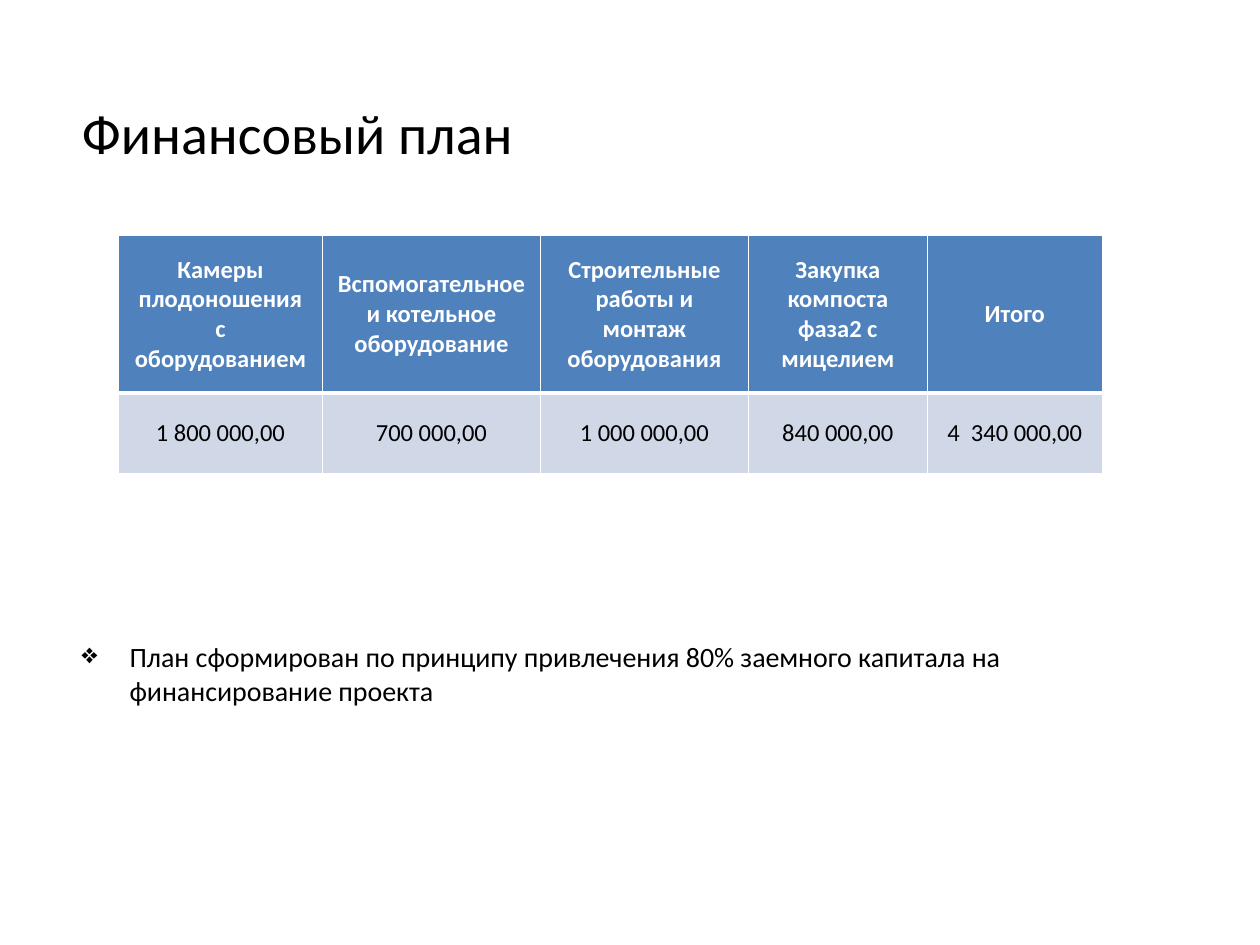
import pptx
import pptx.util
from lxml import etree
from pptx.dml.color import RGBColor
from pptx.enum.text import MSO_ANCHOR, PP_ALIGN
from pptx.oxml.ns import qn
from pptx.util import Inches, Pt

BLACK = RGBColor(0x00, 0x00, 0x00)
WHITE = RGBColor(0xFF, 0xFF, 0xFF)
HEADER_BLUE = RGBColor(0x4F, 0x81, 0xBD)
ROW_BLUE = RGBColor(0xD0, 0xD8, 0xE8)

TITLE = "Финансовый план"
COSTS = [
    ("Камеры плодоношения с оборудованием", "1 800 000,00", 1.62),
    ("Вспомогательное и котельное оборудование", "700 000,00", 1.73),
    ("Строительные работы и монтаж оборудования", "1 000 000,00", 1.65),
    ("Закупка компоста фаза2 с мицелием", "840 000,00", 1.42),
    ("Итого", "4  340 000,00", 1.39),
]
NOTE = ("План сформирован по принципу привлечения 80% заемного капитала "
        "на финансирование проекта")

LEFT, WIDTH = 0.55, 8.88
ROW_HEIGHTS = (1.25, 0.64)


def write(frame, text, size, color=BLACK, bold=False, align=PP_ALIGN.LEFT,
          anchor=MSO_ANCHOR.MIDDLE, bullet=None):
    frame.word_wrap = True
    frame.vertical_anchor = anchor
    paragraph = frame.paragraphs[0]
    paragraph.alignment = align
    if bullet:
        properties = paragraph._p.get_or_add_pPr()
        indent = Inches(0.38)
        properties.set("marL", str(indent))
        properties.set("indent", str(-indent))
        etree.SubElement(properties, qn("a:buChar")).set("char", bullet)
    run = paragraph.add_run()
    run.text = text
    run.font.name = "Calibri"
    run.font.size = Pt(size)
    run.font.bold = bold
    run.font.color.rgb = color


def add_borders(cell, **widths):
    """Draw white cell borders; widths are points keyed by side L, R, T, B."""
    properties = cell._tc.get_or_add_tcPr()
    for position, (side, width) in enumerate(widths.items()):
        line = etree.Element(qn(f"a:ln{side}"), w=str(Pt(width)))
        fill = etree.SubElement(line, qn("a:solidFill"))
        etree.SubElement(fill, qn("a:srgbClr")).set("val", str(WHITE))
        properties.insert(position, line)


def fill_cell(cell, text, fill, **text_format):
    cell.fill.solid()
    cell.fill.fore_color.rgb = fill
    cell.vertical_anchor = MSO_ANCHOR.MIDDLE
    write(cell.text_frame, text, 14, align=PP_ALIGN.CENTER, **text_format)


presentation = pptx.Presentation()
presentation.slide_width = Inches(10)
presentation.slide_height = Inches(7.5)
slide = presentation.slides.add_slide(presentation.slide_layouts[5])

title = slide.shapes.title
title.left, title.top = Inches(LEFT), Inches(0.7)
title.width, title.height = Inches(WIDTH), Inches(0.7)
write(title.text_frame, TITLE, 32)

table_width = sum(width for _, _, width in COSTS)
costs = slide.shapes.add_table(
    len(ROW_HEIGHTS), len(COSTS), Inches(0.94), Inches(1.87),
    Inches(table_width), Inches(sum(ROW_HEIGHTS))).table
for row, height in zip(costs.rows, ROW_HEIGHTS):
    row.height = Inches(height)
for index, (heading, amount, width) in enumerate(COSTS):
    costs.columns[index].width = Inches(width)
    header_cell, amount_cell = costs.cell(0, index), costs.cell(1, index)
    fill_cell(header_cell, heading, HEADER_BLUE, color=WHITE, bold=True)
    fill_cell(amount_cell, amount, ROW_BLUE)
    add_borders(header_cell, L=1, R=1, T=1, B=3)
    add_borders(amount_cell, L=1, R=1, T=3, B=1)

note = slide.shapes.add_textbox(
    Inches(LEFT), Inches(5.03), Inches(WIDTH), Inches(0.64))
write(note.text_frame, NOTE, 16, anchor=MSO_ANCHOR.TOP, bullet="❖")

presentation.save("out.pptx")
